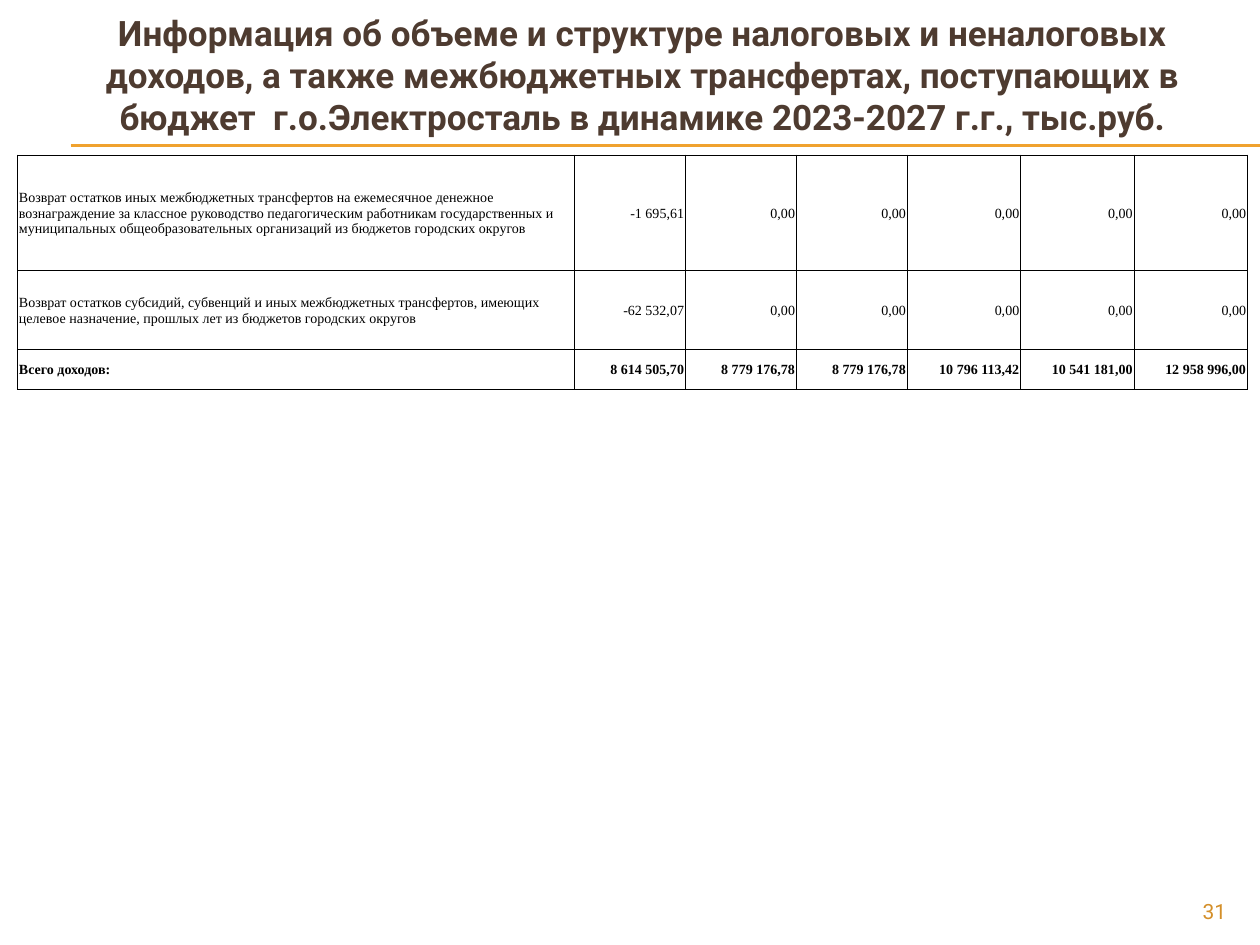
from lxml import etree
from pptx import Presentation
from pptx import util as u
from pptx.dml.color import RGBColor
from pptx.enum import shapes, text
from pptx.oxml.ns import qn

TITLE = ("Информация об объеме и структуре налоговых и неналоговых доходов, "
         "а также межбюджетных трансфертах, поступающих в бюджет  "
         "г.о.Электросталь в динамике 2023-2027 г.г., тыс.руб.")
PAGE_NUMBER = "31"
ZEROS = ["0,00"] * 5
ROWS = [
    ["Возврат остатков иных межбюджетных трансфертов на ежемесячное денежное "
     "вознаграждение за классное руководство педагогическим работникам "
     "государственных и муниципальных общеобразовательных организаций "
     "из бюджетов городских округов", "-1 695,61", *ZEROS],
    ["Возврат остатков субсидий, субвенций и иных межбюджетных трансфертов, "
     "имеющих целевое назначение, прошлых лет из бюджетов городских округов",
     "-62 532,07", *ZEROS],
    ["Всего доходов:", "8 614 505,70", "8 779 176,78", "8 779 176,78",
     "10 796 113,42", "10 541 181,00", "12 958 996,00"],
]
COLUMN_WIDTHS = [4.42] + [0.88] * 3 + [0.9] * 3
ROW_HEIGHTS = [0.92, 0.62, 0.32]
COLORS = {"title": "4E3B30", "rule": "F0A22E", "number": "D48F29", "table": "000000"}
WIDTH, HEIGHT = 10, 7.5
ALIGN = text.PP_ALIGN


def style(paragraph, font_name, size, color, align, bold=False):
    paragraph.alignment = align
    font = paragraph.font
    font.name, font.size, font.bold = font_name, u.Pt(size), bold
    font.color.rgb = RGBColor.from_string(COLORS[color])


def add_text(slide, box, content, anchor, *look):
    frame = slide.shapes.add_textbox(*map(u.Inches, box)).text_frame
    frame.word_wrap = True
    frame.vertical_anchor = anchor
    frame.text = content
    style(frame.paragraphs[0], "Roboto", *look)


def add_rule(slide, y):
    rule = slide.shapes.add_connector(
        shapes.MSO_CONNECTOR.STRAIGHT,
        u.Inches(0.56), u.Inches(y), u.Inches(WIDTH), u.Inches(y))
    rule.line.color.rgb = RGBColor.from_string(COLORS["rule"])
    rule.line.width = u.Pt(0.75)
    etree.SubElement(rule._element.spPr, qn("a:effectLst"))


def add_borders(cell):
    properties = cell._tc.get_or_add_tcPr()
    for index, side in enumerate(("lnL", "lnR", "lnT", "lnB")):
        line = etree.Element(qn(f"a:{side}"), w=str(u.Pt(0.5)))
        fill = etree.SubElement(line, qn("a:solidFill"))
        etree.SubElement(fill, qn("a:srgbClr"), val=COLORS["table"])
        properties.insert(index, line)


def add_income_table(slide):
    table = slide.shapes.add_table(
        len(ROWS), len(COLUMN_WIDTHS), u.Inches(0.14), u.Inches(1.23),
        u.Inches(sum(COLUMN_WIDTHS)), u.Inches(sum(ROW_HEIGHTS))).table
    table.first_row = table.horz_banding = False
    for column, width in zip(table.columns, COLUMN_WIDTHS):
        column.width = u.Inches(width)
    for row, height, values in zip(table.rows, ROW_HEIGHTS, ROWS):
        row.height = u.Inches(height)
        for index, (cell, value) in enumerate(zip(row.cells, values)):
            cell.text = value
            cell.fill.background()
            cell.vertical_anchor = text.MSO_ANCHOR.MIDDLE
            cell.margin_left = cell.margin_right = cell.margin_top = u.Inches(0.01)
            cell.margin_bottom = 0
            style(cell.text_frame.paragraphs[0], "Times New Roman", 8, "table",
                  ALIGN.RIGHT if index else ALIGN.LEFT, values is ROWS[-1])
            add_borders(cell)


def main():
    presentation = Presentation()
    presentation.slide_width = u.Inches(WIDTH)
    presentation.slide_height = u.Inches(HEIGHT)
    slide = presentation.slides.add_slide(presentation.slide_layouts[6])
    for y in (1.15, 1.16):
        add_rule(slide, y)
    add_text(slide, (0.35, 0.13, 9.5, 0.92), TITLE, text.MSO_ANCHOR.MIDDLE,
             20, "title", ALIGN.CENTER, True)
    add_text(slide, (9, 7.08, 0.83, 0.27), PAGE_NUMBER, text.MSO_ANCHOR.TOP,
             12, "number", ALIGN.RIGHT)
    add_income_table(slide)
    presentation.save("out.pptx")


if __name__ == "__main__":
    main()
